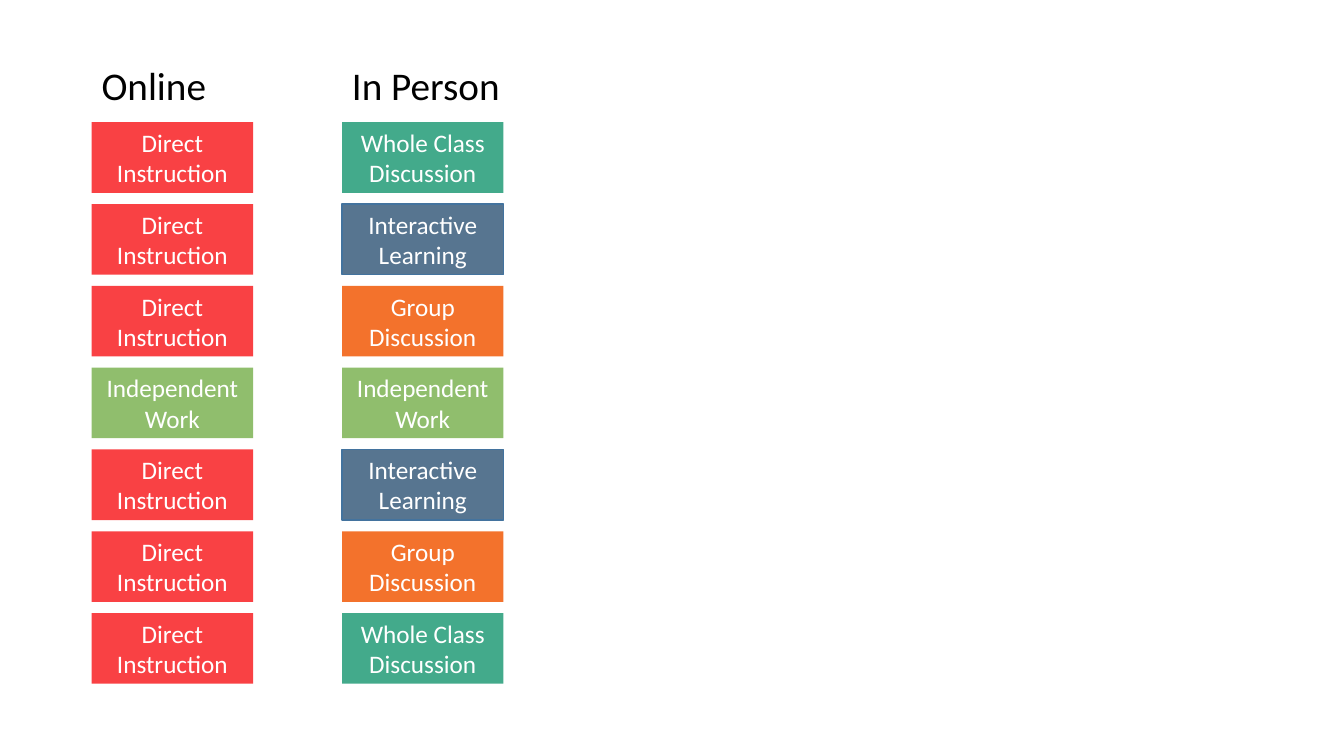
from dataclasses import dataclass

from pptx import Presentation
from pptx.dml.color import RGBColor
from pptx.enum.shapes import MSO_SHAPE
from pptx.enum.text import MSO_ANCHOR, MSO_AUTO_SIZE, PP_ALIGN
from pptx.util import Cm, Pt


@dataclass(frozen=True)
class Theme:
    font: str = "Calibri"
    heading_size: int = 28
    block_size: int = 18
    heading_color: str = "000000"
    block_color: str = "FFFFFF"
    direct: str = "F94144"
    independent: str = "90BE6D"
    whole_class: str = "43AA8B"
    interactive: str = "577590"
    interactive_line: str = "43739E"
    group: str = "F3722C"


theme = Theme()


def add_run(paragraph, text, size, color):
    run = paragraph.add_run()
    run.text = text
    run.font.name = theme.font
    run.font.size = Pt(size)
    run.font.color.rgb = RGBColor.from_string(color)


direct = ("Direct Instruction", theme.direct, None)
independent = ("Independent Work", theme.independent, None)
whole_class = ("Whole Class Discussion", theme.whole_class, None)
interactive = ("Interactive Learning", theme.interactive, theme.interactive_line)
group_talk = ("Group Discussion", theme.group, None)

columns = [
    ("In Person", 8.62, [whole_class, interactive, group_talk, independent,
                         interactive, group_talk, whole_class]),
    ("Online", 2.31, [direct] * 3 + [independent] + [direct] * 3),
]

heading_top, heading_width, heading_height = 1.42, 5.51, 1.45
first_top, last_top = 3.08, 15.45
block_width, block_height = 4.07, 1.78

presentation = Presentation()
presentation.slide_width = Cm(33.87)
presentation.slide_height = Cm(19.05)
slide = presentation.slides.add_slide(presentation.slide_layouts[6])

for heading, left, activities in columns:
    column = slide.shapes.add_group_shape()
    row_step = (last_top - first_top) / (len(activities) - 1)

    for row, (label, fill, line) in enumerate(activities):
        block = column.shapes.add_shape(
            MSO_SHAPE.RECTANGLE, Cm(left), Cm(first_top + row * row_step),
            Cm(block_width), Cm(block_height))
        block.shadow.inherit = False
        block.fill.solid()
        block.fill.fore_color.rgb = RGBColor.from_string(fill)
        if line:
            block.line.color.rgb = RGBColor.from_string(line)
            block.line.width = Pt(1)
        else:
            block.line.fill.background()
        block.text_frame.word_wrap = True
        block.text_frame.vertical_anchor = MSO_ANCHOR.MIDDLE
        paragraph = block.text_frame.paragraphs[0]
        paragraph.alignment = PP_ALIGN.CENTER
        add_run(paragraph, label, theme.block_size, theme.block_color)

    heading_box = column.shapes.add_textbox(
        Cm(left), Cm(heading_top), Cm(heading_width), Cm(heading_height))
    heading_box.text_frame.word_wrap = True
    heading_box.text_frame.auto_size = MSO_AUTO_SIZE.SHAPE_TO_FIT_TEXT
    add_run(heading_box.text_frame.paragraphs[0], heading,
            theme.heading_size, theme.heading_color)

presentation.save("out.pptx")
